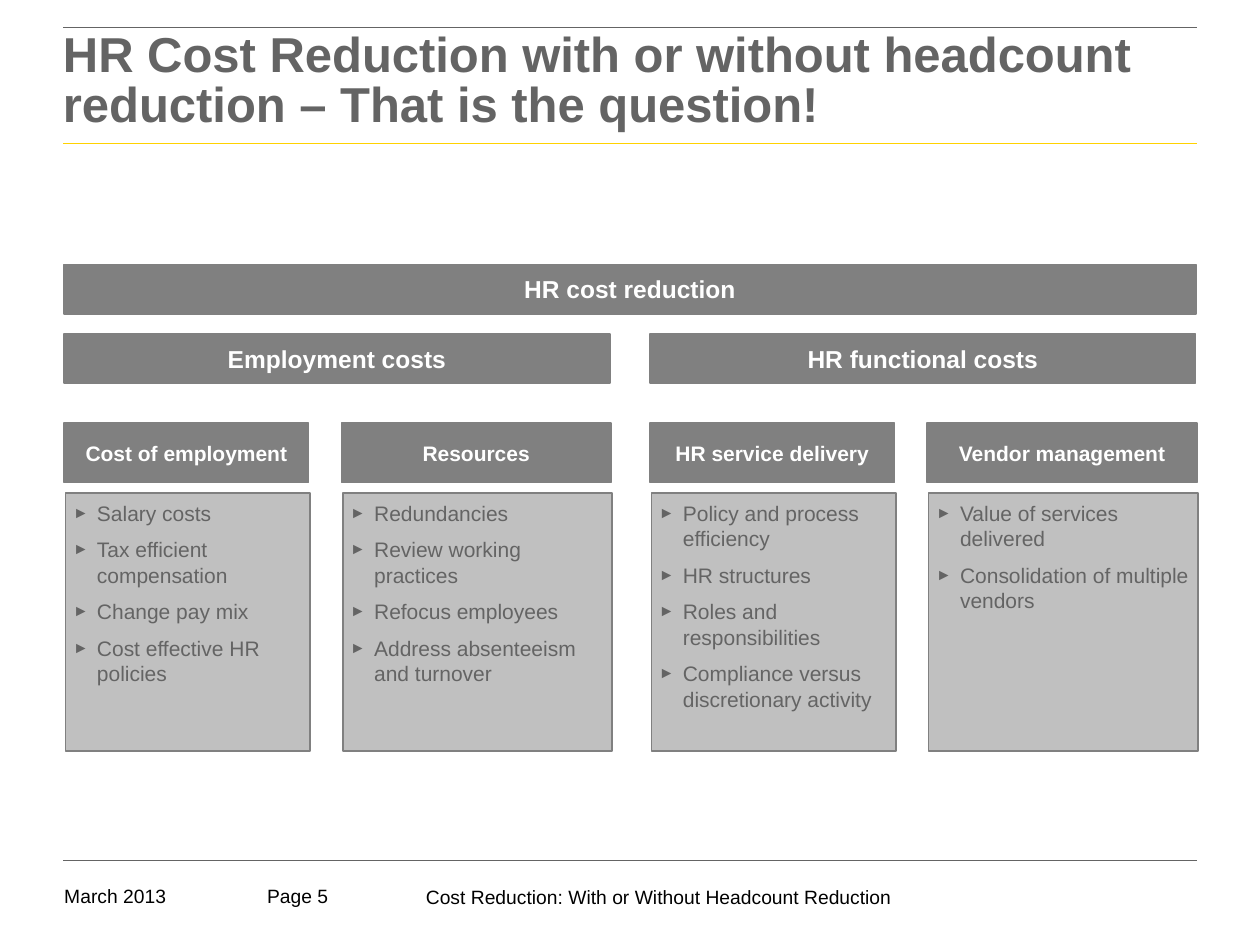
from dataclasses import dataclass

from lxml import etree
from pptx import Presentation
from pptx.dml.color import RGBColor
from pptx.enum.shapes import MSO_CONNECTOR as CONN, MSO_SHAPE as SHAPE
from pptx.enum.text import MSO_ANCHOR as ANCHOR, PP_ALIGN as ALIGN
from pptx.oxml.ns import qn
from pptx.util import Inches, Pt


@dataclass(frozen=True)
class Theme:
    font: str = "Arial"
    text: str = "646464"
    black: str = "000000"
    white: str = "FFFFFF"
    bar: str = "808080"
    panel: str = "C0C0C0"
    accent: str = "FFD200"
    title_size: int = 28
    bar_size: int = 14
    body_size: int = 12
    footer_size: int = 11


THEME = Theme()
LEFT, RIGHT = 0.5, 9.5

# Each half: left edge, heading, then its narrow and wide columns
HALVES = [
    (0.51, "Employment costs", [
        ("Cost of employment", ["Salary costs", "Tax efficient compensation",
                                "Change pay mix", "Cost effective HR policies"]),
        ("Resources", ["Redundancies", "Review working practices",
                       "Refocus employees", "Address absenteeism and turnover"]),
    ]),
    (5.16, "HR functional costs", [
        ("HR service delivery", ["Policy and process efficiency", "HR structures",
                                 "Roles and responsibilities",
                                 "Compliance versus discretionary activity"]),
        ("Vendor management", ["Value of services delivered",
                               "Consolidation of multiple vendors"]),
    ]),
]
COLUMNS = [(0, 1.94, 0.02), (2.2, 2.14, 0.06)]  # offset, width, right inset
FOOTERS = [
    (0.51, 7.02, 1.41, "March 2013"),
    (2.12, 7.02, 0.73, "Page 5"),
    (3.38, 7.03, 3.91, "Cost Reduction: With or Without Headcount Reduction"),
]


def rgb(value):
    return RGBColor.from_string(value)


def set_frame(tf, insets, anchor=ANCHOR.TOP, wrap=True):
    tf.margin_left, tf.margin_top, tf.margin_right, tf.margin_bottom = map(Inches, insets)
    tf.vertical_anchor = anchor
    tf.word_wrap = wrap


def write(p, text, size, color, bold=False, align=ALIGN.LEFT, spacing=None):
    p.alignment = align
    if spacing:
        p.line_spacing = spacing
    r = p.add_run()
    r.text = text
    r.font.name = THEME.font
    r.font.size = Pt(size)
    r.font.bold = bold
    r.font.color.rgb = rgb(color)


def add_bullet(p):
    pPr = p._p.get_or_add_pPr()
    pPr.set("marL", str(Inches(0.19)))
    pPr.set("indent", str(-Inches(0.19)))
    color = etree.SubElement(pPr, qn("a:buClr"))
    etree.SubElement(color, qn("a:srgbClr"), val=THEME.text)
    etree.SubElement(pPr, qn("a:buSzPct"), val="75000")
    etree.SubElement(pPr, qn("a:buFont"), typeface=THEME.font)
    etree.SubElement(pPr, qn("a:buChar"), char="►")


def add_text(s, x, y, w, h, text, top=0, **fmt):
    tf = s.shapes.add_textbox(*map(Inches, (x, y, w, h))).text_frame
    set_frame(tf, (0, top, 0, 0))
    write(tf.paragraphs[0], text, **fmt)


def add_rule(s, y, color, width):
    line = s.shapes.add_connector(CONN.STRAIGHT, *map(Inches, (LEFT, y, RIGHT, y)))
    line.line.color.rgb = rgb(color)
    line.line.width = Pt(width)
    etree.SubElement(line._element.spPr, qn("a:effectLst"))


def add_box(s, x, y, w, h, fill):
    sp = s.shapes.add_shape(SHAPE.RECTANGLE, *map(Inches, (x, y, w, h)))
    sp.shadow.inherit = False
    sp.fill.solid()
    sp.fill.fore_color.rgb = rgb(fill)
    sp.line.color.rgb = rgb(THEME.bar)
    sp.line.width = Pt(1)
    return sp.text_frame


def add_bar(s, x, y, w, h, text, size):
    tf = add_box(s, x, y, w, h, THEME.bar)
    set_frame(tf, [0.06] * 4, ANCHOR.MIDDLE, wrap=False)
    write(tf.paragraphs[0], text, size, THEME.white, bold=True, align=ALIGN.CENTER)


def add_list(s, x, y, w, h, items, right):
    tf = add_box(s, x, y, w, h, THEME.panel)
    set_frame(tf, (0.06, 0.06, right, 0.06))
    for i, item in enumerate(items):
        p = tf.paragraphs[0] if i == 0 else tf.add_paragraph()
        add_bullet(p)
        p.space_before = Pt(3 if i else 0)
        p.space_after = Pt(3.6)
        write(p, item, THEME.body_size, THEME.text)


def main():
    prs = Presentation()
    prs.slide_width, prs.slide_height = Inches(10), Inches(7.5)
    s = prs.slides.add_slide(prs.slide_layouts[6])

    # Footer and rules
    for x, y, w, text in FOOTERS:
        add_text(s, x, y, w, 0.2, text, size=THEME.footer_size, color=THEME.black)
    add_rule(s, 1.14, THEME.accent, 1)
    add_rule(s, 6.83, THEME.text, 0.25)
    add_rule(s, 0.22, THEME.text, 0.5)

    # Title
    add_text(s, LEFT, 0.22, RIGHT - LEFT, 0.94,
             "HR Cost Reduction with or without headcount reduction – That is the question!",
             top=0.04, size=THEME.title_size, color=THEME.text, bold=True, spacing=0.85)

    # Cost tree: one root, two halves, two columns in each
    add_bar(s, 0.51, 2.1, 8.98, 0.39, "HR cost reduction", THEME.bar_size)
    for x, heading, columns in HALVES:
        add_bar(s, x, 2.65, 4.33, 0.39, heading, THEME.bar_size)
        for (dx, w, right), (name, items) in zip(COLUMNS, columns):
            add_bar(s, x + dx, 3.36, w, 0.47, name, THEME.body_size)
            add_list(s, x + dx + 0.01, 3.91, w, 2.05, items, right)

    prs.save("out.pptx")


if __name__ == "__main__":
    main()
